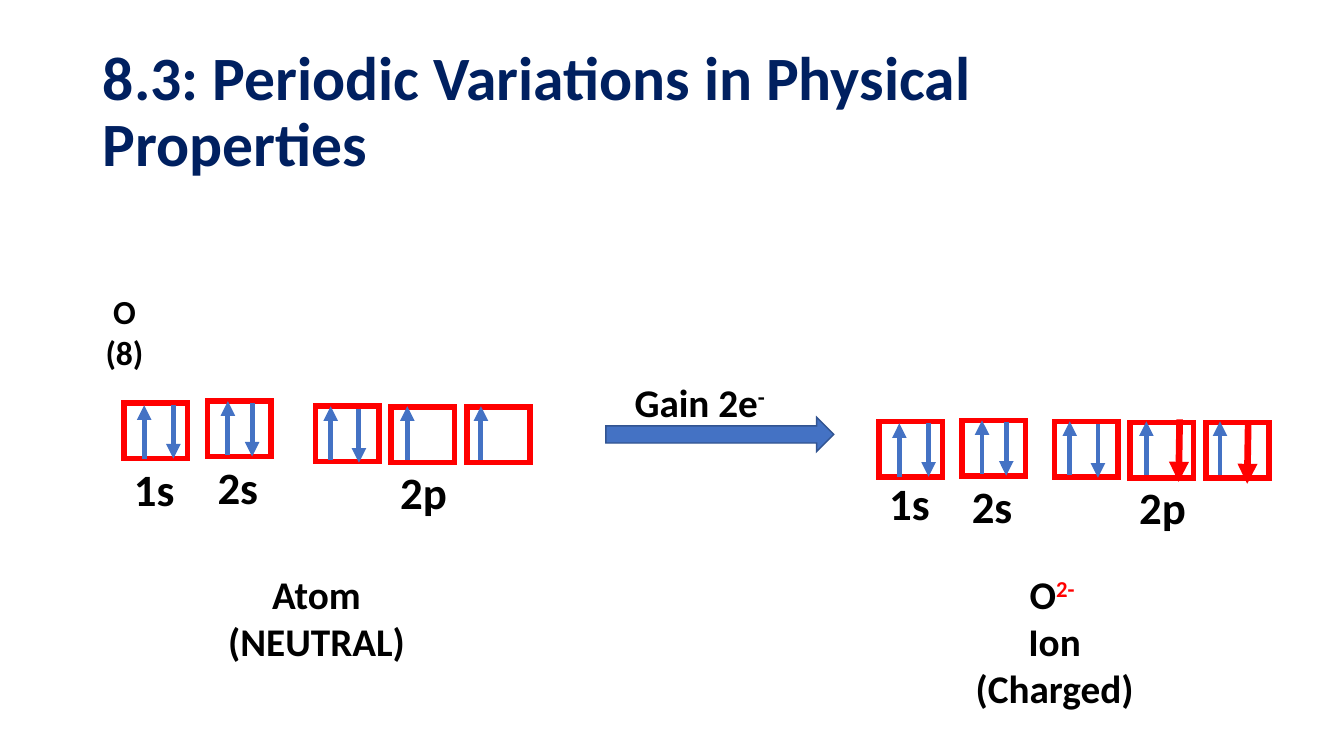
from lxml.etree import SubElement
from pptx import Presentation
from pptx.dml.color import RGBColor
from pptx.enum.shapes import MSO_CONNECTOR, MSO_SHAPE
from pptx.enum.text import MSO_ANCHOR, MSO_AUTO_SIZE, PP_ALIGN
from pptx.oxml.ns import qn
from pptx.util import Inches, Pt

COLORS = {
    "title": "002060",
    "text": "000000",
    "gained": "FF0000",
    "box": "FF0000",
    "electron": "4472C4",
    "arrow_edge": "325491",
}
FONT = "Calibri"
BOX_WIDTH, BOX_HEIGHT = 0.63, 0.55
SPIN_LENGTH = 0.53

# Spin arrows as (x offset, y offset, points up), measured from the box corner
SPINS_1S = [(0.2, 0.02, True), (0.49, 0.02, False)]
SPINS_2S = [(0.2, 0, True), (0.44, 0.02, False)]
SPINS_2P = [
    [(0.15, 0, True), (0.43, 0.03, False)],
    [(0.16, -0.01, True)],
    [(0.14, -0.01, True)],
]


class SlideBuilder:
    def __init__(self, slide):
        self.slide = slide

    def color(self, name):
        return RGBColor.from_string(COLORS[name])

    def run(self, paragraph, text, size, color="text", superscript=False):
        run = paragraph.add_run()
        run.text = text
        run.font.name = FONT
        run.font.size = Pt(size)
        run.font.bold = True
        run.font.color.rgb = self.color(color)
        if superscript:
            run.font._element.set("baseline", "30000")

    def title(self, text):
        title = self.slide.shapes.title
        title.left, title.top = Inches(0.92), Inches(0.4)
        title.width, title.height = Inches(11.5), Inches(1.45)
        frame = title.text_frame
        frame.auto_size = MSO_AUTO_SIZE.NONE
        frame.vertical_anchor = MSO_ANCHOR.MIDDLE
        paragraph = frame.paragraphs[0]
        paragraph.alignment = PP_ALIGN.LEFT
        paragraph.line_spacing = 0.9
        self.run(paragraph, text, 44, "title")

    def text(self, left, top, width, height, paragraphs, size=28, align=PP_ALIGN.CENTER):
        """Each paragraph is a list of (text, color, superscript) runs."""
        box = self.slide.shapes.add_textbox(
            Inches(left), Inches(top), Inches(width), Inches(height))
        frame = box.text_frame
        frame.word_wrap = True
        frame.auto_size = MSO_AUTO_SIZE.SHAPE_TO_FIT_TEXT
        for index, runs in enumerate(paragraphs):
            paragraph = frame.add_paragraph() if index else frame.paragraphs[0]
            paragraph.alignment = align
            for text, color, superscript in runs:
                self.run(paragraph, text, size, color, superscript)

    def shape(self, kind, left, top, width, height, line, line_width, fill=None):
        shape = self.slide.shapes.add_shape(
            kind, Inches(left), Inches(top), Inches(width), Inches(height))
        shape.shadow.inherit = False
        if fill:
            shape.fill.solid()
            shape.fill.fore_color.rgb = self.color(fill)
        else:
            shape.fill.background()
        shape.line.color.rgb = self.color(line)
        shape.line.width = Pt(line_width)
        SubElement(shape.line._get_or_add_ln(), qn("a:miter"), lim="800000")

    def arrow(self, start, end, color="electron", width=3.5):
        connector = self.slide.shapes.add_connector(
            MSO_CONNECTOR.STRAIGHT, *(Inches(value) for value in (*start, *end)))
        connector.line.color.rgb = self.color(color)
        connector.line.width = Pt(width)
        SubElement(connector.line._get_or_add_ln(), qn("a:tailEnd"), type="triangle")
        SubElement(connector._element.spPr, qn("a:effectLst"))

    def orbital(self, left, top, spins):
        self.shape(MSO_SHAPE.RECTANGLE, left, top, BOX_WIDTH, BOX_HEIGHT, "box", 4)
        for x_offset, y_offset, points_up in spins:
            x, y = left + x_offset, top + y_offset
            ends = [(x, y), (x, y + SPIN_LENGTH)]
            self.arrow(*(reversed(ends) if points_up else ends))

    def label(self, left, top, width, text):
        self.text(left, top, width, 0.64, [[(text, "text", False)]], 32, PP_ALIGN.LEFT)

    def s_subshell(self, left, top, name, spins, label_top):
        self.orbital(left, top, spins)
        self.label(left, label_top, BOX_WIDTH, name)

    def p_subshell(self, left, top):
        for index, spins in enumerate(SPINS_2P):
            self.orbital(left + 0.75 * index, top + (0.01 if index else 0), spins)
        self.label(left + 0.74, top + 0.53, 0.84, "2p")


def main():
    presentation = Presentation()
    presentation.slide_width = Inches(13.33)
    presentation.slide_height = Inches(7.5)
    slide = presentation.slides.add_slide(presentation.slide_layouts[5])
    builder = SlideBuilder(slide)

    builder.title("8.3: Periodic Variations in Physical Properties")
    builder.text(0.92, 2.84, 0.63, 0.91, [[("O (8)", "text", False)]], 24)

    # Neutral atom
    builder.s_subshell(1.23, 4, "1s", SPINS_1S, 4.53)
    builder.s_subshell(2.06, 3.98, "2s", SPINS_2S, 4.51)
    builder.p_subshell(3.13, 4.03)
    builder.text(2.11, 5.61, 2.06, 1.04, [[("Atom (NEUTRAL)", "text", False)]])

    # Electron gain
    builder.shape(MSO_SHAPE.RIGHT_ARROW, 6.01, 4.14, 2.26, 0.34,
                  "arrow_edge", 1, "electron")
    builder.text(5.91, 3.7, 2.06, 0.57,
                 [[("Gain 2e", "text", False), ("-", "text", True)]])

    # Charged ion
    builder.s_subshell(8.72, 4.18, "1s", SPINS_1S, 4.67)
    builder.s_subshell(9.54, 4.17, "2s", SPINS_2S, 4.7)
    builder.p_subshell(10.46, 4.18)
    for x, y in [(11.7, 4.16), (12.38, 4.18)]:
        builder.arrow((x, y), (x - 0.01, y + 0.62), "gained", 4.75)
    builder.text(9.43, 5.61, 2.06, 1.51, [
        [("O", "text", False), ("2- ", "gained", True)],
        [("Ion (Charged)", "text", False)],
    ])

    presentation.save("out.pptx")


if __name__ == "__main__":
    main()
